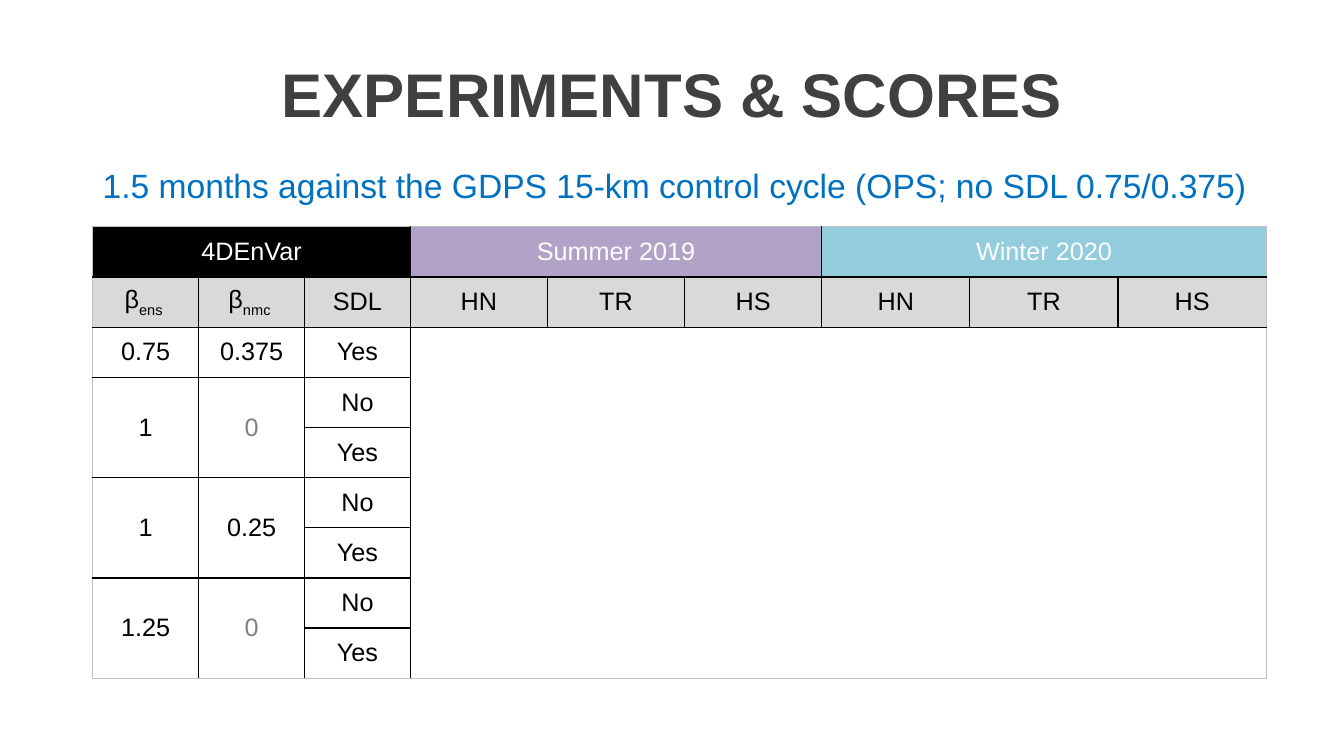
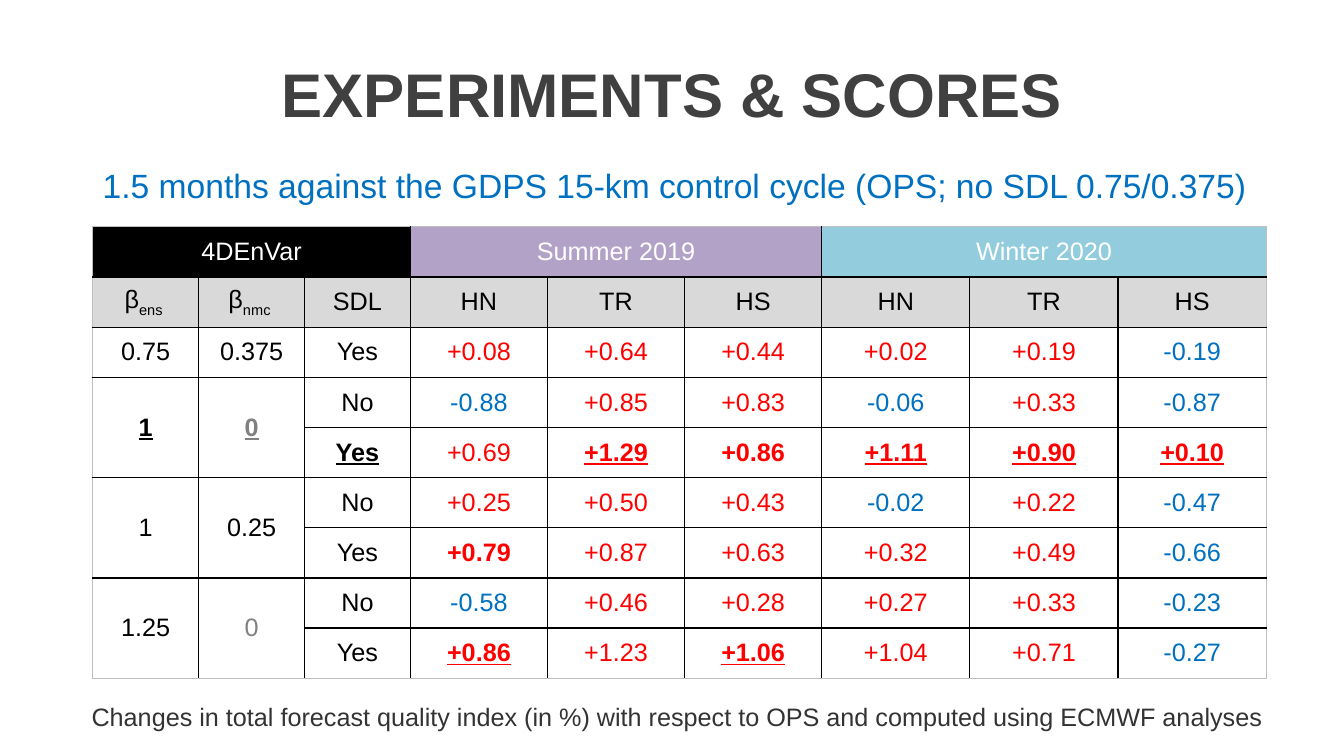
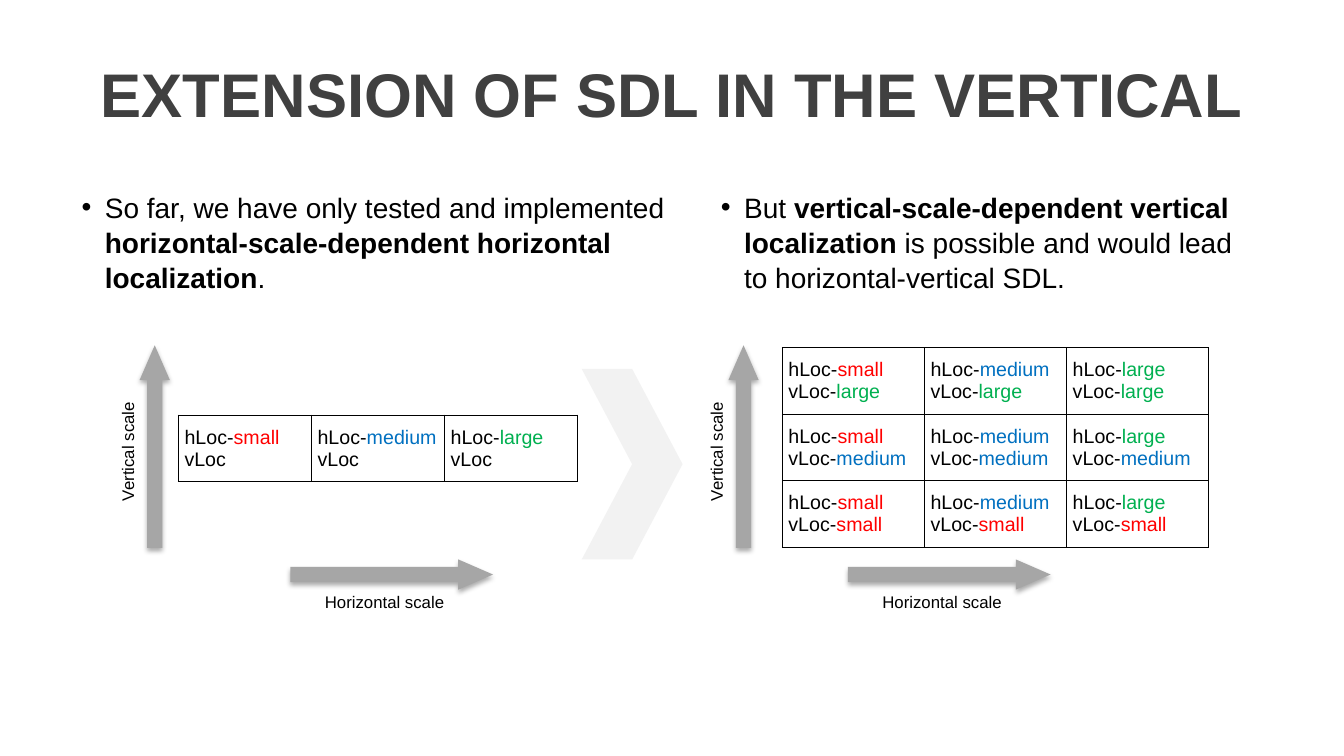
from dataclasses import dataclass

from lxml import etree
from pptx import Presentation
from pptx.dml.color import RGBColor
from pptx.enum import shapes, text
from pptx.oxml import ns
from pptx.util import Inches, Pt

BLACK = RGBColor(0x00, 0x00, 0x00)
WHITE = RGBColor(0xFF, 0xFF, 0xFF)
TITLE_GREY = RGBColor(0x40, 0x40, 0x40)
NOTE_GREY = RGBColor(0x33, 0x33, 0x33)
MUTED = RGBColor(0x80, 0x80, 0x80)
ARROW_GREY = RGBColor(0xA6, 0xA6, 0xA6)
EDGE_GREY = RGBColor(0xBF, 0xBF, 0xBF)
HEADER_GREY = RGBColor(0xD9, 0xD9, 0xD9)
PALE_GREY = RGBColor(0xF2, 0xF2, 0xF2)
PURPLE = RGBColor(0xB3, 0xA2, 0xC7)
SKY = RGBColor(0x93, 0xCD, 0xDD)
BLUE = RGBColor(0x00, 0x70, 0xC0)
RED = RGBColor(0xFF, 0x00, 0x00)
GREEN = RGBColor(0x00, 0xB0, 0x50)

FONT = "Arial"
TITLE_ONLY, TWO_CONTENT = 5, 3
CENTER = text.PP_ALIGN.CENTER
LEFT = text.PP_ALIGN.LEFT
MIDDLE = text.MSO_ANCHOR.MIDDLE

SCALE_COLOURS = {"small": RED, "medium": BLUE, "large": GREEN}
SCALES = list(SCALE_COLOURS)

# (βens, βnmc, SDL settings) of each group of experiments
EXPERIMENTS = [
    ("0.75", "0.375", ["Yes"]),
    ("1", "0", ["No", "Yes"]),
    ("1", "0.25", ["No", "Yes"]),
    ("1.25", "0", ["No", "Yes"]),
]
BEST_GROUP, BEST_ROW = 1, 4

# One line per experiment; * marks bold and _ marks underline
SCORES = [
    "+0.08 +0.64 +0.44 +0.02 +0.19 -0.19",
    "-0.88 +0.85 +0.83 -0.06 +0.33 -0.87",
    "+0.69 +1.29*_ +0.86* +1.11*_ +0.90*_ +0.10*_",
    "+0.25 +0.50 +0.43 -0.02 +0.22 -0.47",
    "+0.79* +0.87 +0.63 +0.32 +0.49 -0.66",
    "-0.58 +0.46 +0.28 +0.27 +0.33 -0.23",
    "+0.86*_ +1.23 +1.06*_ +1.04 +0.71 -0.27",
]


@dataclass
class Run:
    text: str
    colour: RGBColor = BLACK
    bold: bool = False
    underline: bool = False
    baseline: int = 0


class Deck:
    """Holds the shared style and the current slide."""

    def __init__(self):
        self.presentation = Presentation()
        self.presentation.slide_width = Inches(13.33)
        self.presentation.slide_height = Inches(7.5)
        self.slide = None

    def place(self, shape, left, top, width, height):
        shape.left, shape.top = Inches(left), Inches(top)
        shape.width, shape.height = Inches(width), Inches(height)

    def add_runs(self, paragraph, runs, size, align=LEFT):
        paragraph.alignment = align
        for part in runs:
            run = paragraph.add_run()
            run.text = part.text
            font = run.font
            font.name, font.size = FONT, Pt(size)
            font.bold, font.underline = part.bold, part.underline
            font.color.rgb = part.colour
            if part.baseline:
                run._r.get_or_add_rPr().set("baseline", str(part.baseline * 1000))

    def new_slide(self, title, layout=TITLE_ONLY):
        layouts = self.presentation.slide_layouts
        self.slide = self.presentation.slides.add_slide(layouts[layout])
        shape = self.slide.shapes.title
        self.place(shape, 0.67, 0.3, 12, 1.25)
        frame = shape.text_frame
        frame.auto_size = text.MSO_AUTO_SIZE.NONE
        frame.vertical_anchor = MIDDLE
        self.add_runs(frame.paragraphs[0], [Run(title, TITLE_GREY, bold=True)], 44, CENTER)

    def bullet(self, index, runs, left, top, width, height):
        shape = self.slide.placeholders[index]
        self.place(shape, left, top, width, height)
        shape.text_frame.auto_size = text.MSO_AUTO_SIZE.NONE
        paragraph = shape.text_frame.paragraphs[0]
        properties = paragraph._p.get_or_add_pPr()
        properties.set("marL", str(Inches(0.23)))
        properties.set("indent", str(-Inches(0.23)))
        paragraph.space_before = Pt(0)
        paragraph.line_spacing = 1.05
        self.add_runs(paragraph, runs, 20)

    def label(self, run, left, top, width, height, size, align=LEFT, rotation=0):
        box = self.slide.shapes.add_textbox(0, 0, 0, 0)
        self.place(box, left, top, width, height)
        box.rotation = rotation
        box.text_frame.word_wrap = True
        self.add_runs(box.text_frame.paragraphs[0], [run], size, align)

    def shape(self, kind, colour, left, top, width, height):
        shape = self.slide.shapes.add_shape(kind, 0, 0, 0, 0)
        self.place(shape, left, top, width, height)
        shape.fill.solid()
        shape.fill.fore_color.rgb = colour
        shape.line.fill.background()
        shape.shadow.inherit = False
        return shape

    def arrow(self, left, top, rotation=0):
        arrow = self.shape(shapes.MSO_SHAPE.RIGHT_ARROW, ARROW_GREY, left, top, 2.01, 0.3)
        arrow.rotation = rotation
        arrow.adjustments[0], arrow.adjustments[1] = 0.5, 1.15
        effects = arrow._element.spPr.find(ns.qn("a:effectLst"))
        shadow = etree.SubElement(
            effects, ns.qn("a:outerShdw"), blurRad=str(Pt(3.5)), dist=str(Pt(2.2)),
            dir="5400000", rotWithShape="0")
        colour = etree.SubElement(shadow, ns.qn("a:srgbClr"), val=str(BLACK))
        etree.SubElement(colour, ns.qn("a:alpha"), val="32000")

    def table(self, left, top, widths, heights):
        frame = self.slide.shapes.add_table(
            len(heights), len(widths), Inches(left), Inches(top),
            Inches(sum(widths)), Inches(sum(heights)))
        table = frame.table
        table.first_row = table.horz_banding = False
        for column, width in zip(table.columns, widths):
            column.width = Inches(width)
        for row, height in zip(table.rows, heights):
            row.height = Inches(height)
        return table

    def borders(self, table, edge=BLACK, edge_width=1):
        """Rule every cell, with a separate style for the table's edge."""
        rows, columns = len(table.rows), len(table.columns)
        for row in range(rows):
            for column in range(columns):
                cell = table.cell(row, column)
                right, bottom = column + 1, row + 1
                if cell.is_merge_origin:
                    right, bottom = column + cell.span_width, row + cell.span_height
                sides = {"L": column == 0, "R": right == columns,
                         "T": row == 0, "B": bottom == rows}
                properties = cell._tc.get_or_add_tcPr()
                for position, (side, outer) in enumerate(sides.items()):
                    line = etree.Element(
                        ns.qn("a:ln" + side), w=str(Pt(edge_width if outer else 1)))
                    fill = etree.SubElement(line, ns.qn("a:solidFill"))
                    etree.SubElement(fill, ns.qn("a:srgbClr"),
                                     val=str(edge if outer else BLACK))
                    properties.insert(position, line)

    def cell(self, table, row, column, lines, fill=WHITE, size=18, align=CENTER, span=(1, 1)):
        """Fill a cell with lines, each a list of runs."""
        cell = table.cell(row, column)
        if span != (1, 1):
            cell.merge(table.cell(row + span[0] - 1, column + span[1] - 1))
        cell.fill.solid()
        cell.fill.fore_color.rgb = fill
        cell.vertical_anchor = MIDDLE
        frame = cell.text_frame
        for index, runs in enumerate(lines):
            paragraph = frame.add_paragraph() if index else frame.paragraphs[0]
            self.add_runs(paragraph, runs, size, align)
        return cell


def score_run(mark):
    value = mark.rstrip("*_")
    colour = RED if value.startswith("+") else BLUE
    return Run(value, colour, bold="*" in mark, underline="_" in mark)


def experiments_slide(deck, with_scores):
    deck.new_slide("EXPERIMENTS & SCORES")
    deck.label(
        Run("1.5 months against the GDPS 15-km control cycle (OPS; no SDL 0.75/0.375)", BLUE),
        0.92, 1.59, 12, 0.5, 24)
    table = deck.table(0.92, 2.25, [1.05] * 3 + [1.36] * 3 + [1.47] * 3, [4.48 / 9] * 9)

    # Two header rows
    groups = [("4DEnVar", BLACK), ("Summer 2019", PURPLE), ("Winter 2020", SKY)]
    for index, (name, fill) in enumerate(groups):
        deck.cell(table, 0, 3 * index, [[Run(name, WHITE)]], fill, span=(1, 3))
    headings = [[Run("β"), Run(name, baseline=-25)] for name in ("ens ", "nmc ")]
    headings += [[Run(name)] for name in ["SDL"] + ["HN", "TR", "HS"] * 2]
    for column, runs in enumerate(headings):
        deck.cell(table, 1, column, [runs], HEADER_GREY)

    # Experiment settings
    row = 2
    for group, (ensemble, static, settings) in enumerate(EXPERIMENTS):
        best = with_scores and group == BEST_GROUP
        for column, value in enumerate((ensemble, static)):
            colour = MUTED if value == "0" else BLACK
            deck.cell(table, row, column, [[Run(value, colour, best, best)]],
                      span=(len(settings), 1))
        for setting in settings:
            best = with_scores and row == BEST_ROW
            deck.cell(table, row, 2, [[Run(setting, BLACK, best, best)]])
            row += 1

    # Scores, or one empty area
    if with_scores:
        for row, line in enumerate(SCORES, 2):
            for column, mark in enumerate(line.split(), 3):
                deck.cell(table, row, column, [[score_run(mark)]])
        deck.label(
            Run("Changes in total forecast quality index (in %) with respect to OPS "
                "and computed using ECMWF analyses", NOTE_GREY),
            0.81, 6.91, 12.14, 0.4, 18)
    else:
        deck.cell(table, 2, 3, [], span=(7, 6))
    deck.borders(table, EDGE_GREY, 0.5)


def scale_panel(deck, table_at, cell_width, vertical_scales, horizontal_left, vertical_left):
    """Draw a grid of localizations with its two scale axes."""
    table = deck.table(*table_at, [cell_width] * 3, [0.66] * len(vertical_scales))
    for row, vertical in enumerate(vertical_scales):
        for column, horizontal in enumerate(SCALES):
            lines = [[Run("hLoc-"), Run(horizontal, SCALE_COLOURS[horizontal])], [Run("vLoc")]]
            if vertical:
                lines[1] = [Run("vLoc-"), Run(vertical, SCALE_COLOURS[vertical])]
            cell = deck.cell(table, row, column, lines, size=14, align=LEFT)
            cell.margin_left = cell.margin_right = Inches(0.06)
            cell.margin_top = cell.margin_bottom = Inches(0.03)
    deck.borders(table)
    deck.arrow(horizontal_left, 5.55)
    deck.label(Run("Horizontal scale"), horizontal_left - 0.6, 5.82, 3.07, 0.3, 12, CENTER)
    deck.arrow(vertical_left, 4.28, 270)
    deck.label(Run("Vertical scale"), vertical_left - 0.33, 4.33, 2.13, 0.3, 12, CENTER, 270)


def vertical_slide(deck):
    deck.new_slide("EXTENSION OF SDL IN THE VERTICAL", TWO_CONTENT)
    deck.bullet(1, [
        Run("So far, we have only tested and implemented "),
        Run("horizontal-scale-dependent horizontal localization", bold=True),
        Run("."),
    ], 0.71, 1.82, 6.1, 1.11)
    deck.bullet(2, [
        Run("But "),
        Run("vertical-scale-dependent vertical localization ", bold=True),
        Run("is possible and would lead to horizontal-vertical SDL."),
    ], 7.05, 1.82, 5.55, 1.11)
    scale_panel(deck, (1.77, 4.12), 1.32, [None], 2.88, 0.53)
    deck.shape(shapes.MSO_SHAPE.CHEVRON, PALE_GREY, 5.77, 3.66, 1, 1.89)
    scale_panel(deck, (7.76, 3.45), 1.41, SCALES[::-1], 8.41, 6.37)


def main():
    deck = Deck()
    experiments_slide(deck, with_scores=False)
    experiments_slide(deck, with_scores=True)
    vertical_slide(deck)
    deck.presentation.save("out.pptx")


if __name__ == "__main__":
    main()
